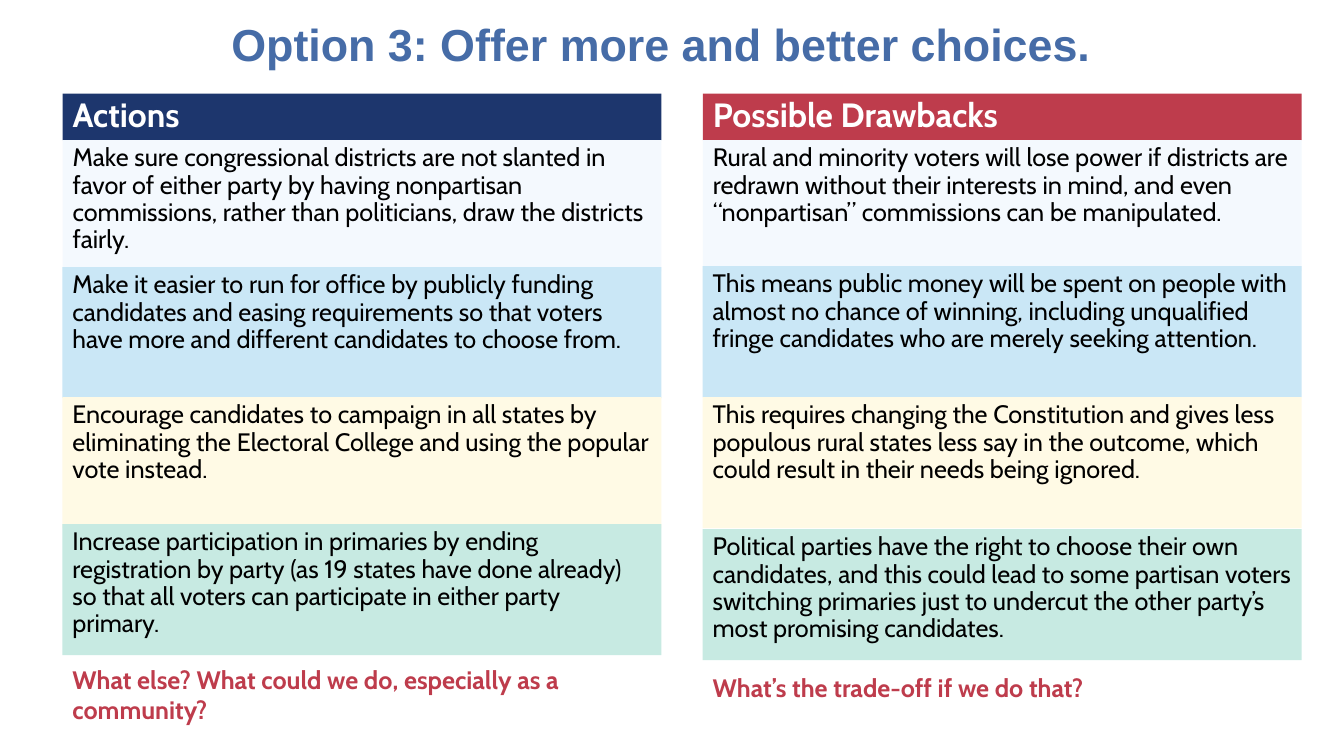
"""Build the slide that sets the actions of option 3 against their drawbacks."""
from lxml import etree
from pptx import Presentation
from pptx.dml.color import RGBColor
from pptx.enum.shapes import MSO_SHAPE
from pptx.enum.text import MSO_ANCHOR, MSO_AUTO_SIZE, PP_ALIGN
from pptx.oxml.ns import qn
from pptx.util import Inches, Pt

RECTANGLE = MSO_SHAPE.RECTANGLE
TOP, MIDDLE, BOTTOM = MSO_ANCHOR.TOP, MSO_ANCHOR.MIDDLE, MSO_ANCHOR.BOTTOM
LEFT, CENTER = PP_ALIGN.LEFT, PP_ALIGN.CENTER
NO_AUTOFIT = MSO_AUTO_SIZE.NONE
COMPARISON_LAYOUT = 5 - 1

COLORS = {
    "title": "466CA7", "navy": "1D366D", "red": "BE3C4C", "white": "FFFFFF",
    "black": "000000", "pale": "F4F9FE", "blue": "CAE7F6", "cream": "FFFAE5",
    "mint": "C7EAE2",
}
ROW_FILLS = ["pale", "blue", "cream", "mint"]
COLUMN_WIDTH, ROW_HEIGHT = 5.94, 1.3
HEADER_TOP, HEADER_HEIGHT, QUESTION_TOP = 0.93, 0.46, 6.54

TITLE_FORMAT = {"name": "Arial", "size": Pt(32), "bold": True}
HEADER_FORMAT = {"name": "Cabin", "size": Pt(24), "bold": True}
ROW_FORMAT = {"name": "Cabin", "size": Pt(18), "bold": False}
QUESTION_FORMAT = {"name": "Cabin", "size": Pt(18), "bold": True}
TIGHT = {"line_spacing": 0.9, "space_before": Pt(10), "alignment": LEFT}
TITLE_SPACING = {"line_spacing": 0.9, "alignment": CENTER}
PLAIN = {"alignment": LEFT}

COLUMNS = [
    {
        "left": 0.62, "header": "Actions", "header_fill": "navy",
        "placeholders": (1, 2), "tops": [1.39, 2.65, 3.94, 5.2],
        "rows": [
            "Make sure congressional districts are not slanted in favor of either "
            "party by having nonpartisan commissions, rather than politicians, "
            "draw the districts fairly.",
            "Make it easier to run for office by publicly funding candidates and "
            "easing requirements so that voters have more and different "
            "candidates to choose from.",
            "Encourage candidates to campaign in all states by eliminating the "
            "Electoral College and using the popular vote instead.",
            "Increase participation in primaries by ending registration by party "
            "(as 19 states have done already) so that all voters can participate "
            "in either party primary.",
        ],
        "question": "What else? What could we do, especially as a community?",
        "question_height": 0.71, "question_inset": 0.05,
    },
    {
        "left": 6.97, "header": "Possible Drawbacks", "header_fill": "red",
        "placeholders": (3, 4), "tops": [1.39, 2.64, 3.94, 5.25],
        "rows": [
            "Rural and minority voters will lose power if districts are redrawn "
            "without their interests in mind, and even “nonpartisan” commissions "
            "can be manipulated.",
            "This means public money will be spent on people with almost no "
            "chance of winning, including unqualified fringe candidates who are "
            "merely seeking attention.",
            "This requires changing the Constitution and gives less populous "
            "rural states less say in the outcome, which could result in their "
            "needs being ignored.",
            "Political parties have the right to choose their own candidates, and "
            "this could lead to some partisan voters switching primaries just to "
            "undercut the other party’s most promising candidates.",
        ],
        "question": "What’s the trade-off if we do that?",
        "question_height": 0.5, "question_inset": 0.13,
    },
]


def set_attributes(target, values):
    """Set each named value on the target."""
    for name, value in values.items():
        setattr(target, name, value)


def place(shape, left, top, width, height):
    """Move and size a shape, in inches."""
    set_attributes(shape, {
        "left": Inches(left), "top": Inches(top),
        "width": Inches(width), "height": Inches(height),
    })


def paint(shape, color):
    """Fill a shape with a flat colour and no outline."""
    shape.fill.solid()
    shape.fill.fore_color.rgb = RGBColor.from_string(COLORS[color])
    shape.line.fill.background()


def write(shape, text, font_format, color, spacing, anchor):
    """Write one formatted paragraph without a bullet."""
    frame = shape.text_frame
    set_attributes(frame, {
        "word_wrap": True, "auto_size": NO_AUTOFIT, "vertical_anchor": anchor,
    })
    para = frame.paragraphs[0]
    set_attributes(para, spacing)
    properties = para._p.get_or_add_pPr()
    properties.set("marL", "0")
    properties.set("indent", "0")
    etree.SubElement(properties, qn("a:buNone"))
    span = para.add_run()
    span.text = text
    set_attributes(span.font, font_format)
    span.font.color.rgb = RGBColor.from_string(COLORS[color])


def add_band(page):
    """Add a rectangle without a shadow."""
    band = page.shapes.add_shape(RECTANGLE, 0, 0, 0, 0)
    band.shadow.inherit = False
    return band


def add_title(page, text):
    """Fill the title placeholder."""
    title = page.shapes.title
    place(title, 0.81, 0.12, 11.5, 0.7)
    write(title, text, TITLE_FORMAT, "title", TITLE_SPACING, MIDDLE)


def add_header(page, column):
    """Fill the heading placeholder of a column."""
    header = page.placeholders[column["placeholders"][0]]
    place(header, column["left"], HEADER_TOP, COLUMN_WIDTH, HEADER_HEIGHT)
    paint(header, column["header_fill"])
    write(header, column["header"], HEADER_FORMAT, "white", TIGHT, BOTTOM)


def add_rows(page, column):
    """Stack the coloured rows, the first of them in the body placeholder."""
    rows = zip(column["tops"], column["rows"], ROW_FILLS)
    for index, (top, text, fill) in enumerate(rows):
        if index == 0:
            row = page.placeholders[column["placeholders"][1]]
        else:
            row = add_band(page)
        place(row, column["left"], top, COLUMN_WIDTH, ROW_HEIGHT)
        paint(row, fill)
        write(row, text, ROW_FORMAT, "black", TIGHT, TOP)


def add_question(page, column):
    """Add the closing question under a column."""
    box = page.shapes.add_textbox(0, 0, 0, 0)
    place(box, column["left"], QUESTION_TOP, COLUMN_WIDTH, column["question_height"])
    box.text_frame.margin_top = Inches(column["question_inset"])
    write(box, column["question"], QUESTION_FORMAT, "red", PLAIN, TOP)


def main():
    """Build and save the deck."""
    deck = Presentation()
    deck.slide_width, deck.slide_height = Inches(13.33), Inches(7.5)
    page = deck.slides.add_slide(deck.slide_layouts[COMPARISON_LAYOUT])
    add_title(page, "Option 3: Offer more and better choices.")
    for column in COLUMNS:
        add_header(page, column)
        add_rows(page, column)
        add_question(page, column)
    deck.save("out.pptx")


if __name__ == "__main__":
    main()
